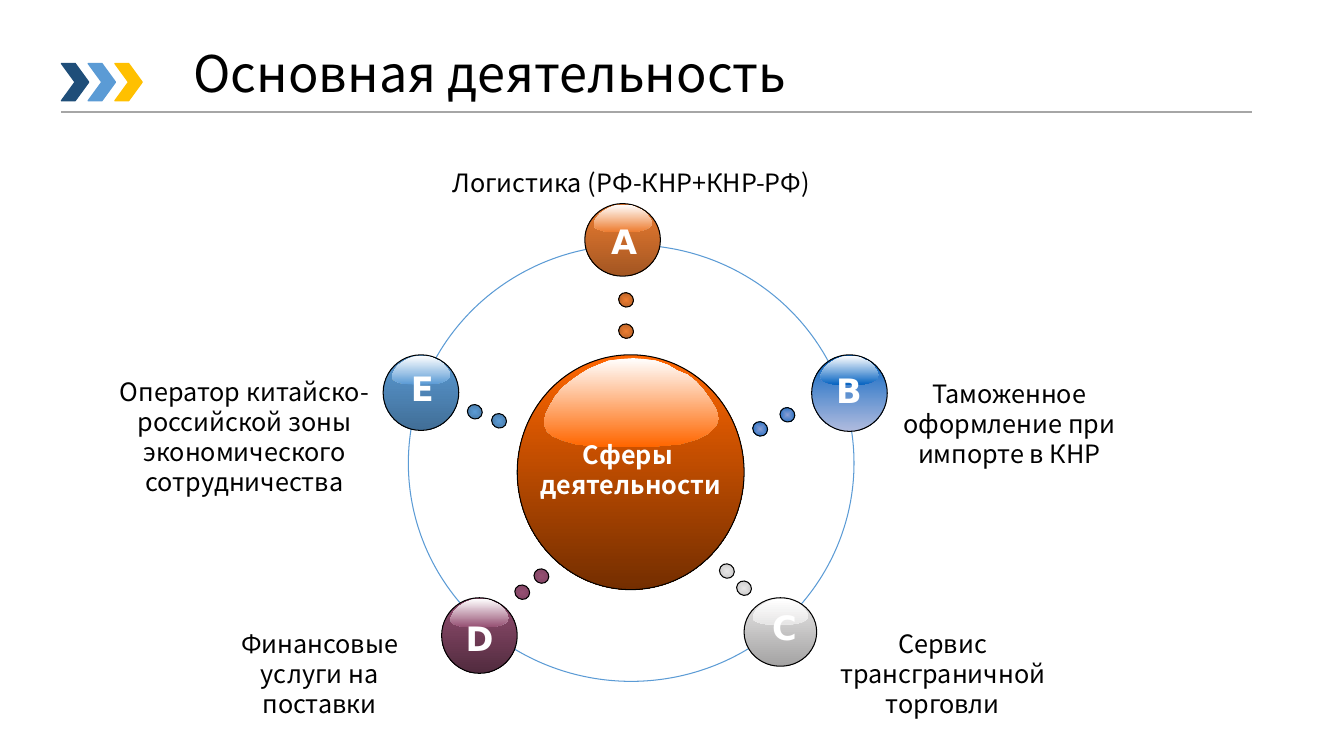
from collections import namedtuple
from lxml import etree
from pptx import Presentation
from pptx.dml.color import RGBColor
from pptx.enum.shapes import MSO_CONNECTOR, MSO_SHAPE as Preset
from pptx.enum.text import MSO_ANCHOR as Anchor, PP_ALIGN as Align
from pptx.oxml import parse_xml
from pptx.oxml.ns import nsdecls, qn
from pptx.util import Inches, Pt

BODY_FONT = "Noto Sans CJK SC"
LETTER_FONT = "DejaVu Sans"

GLOSS_OUTLINE = [
    (98, 57), (100, 68), (98, 77), (94, 85), (87, 92), (78, 97), (68, 99),
    (60, 100), (36, 100), (26, 99), (18, 97), (11, 93), (5, 88), (2, 83),
    (0, 74), (1, 64), (4, 52), (7, 42), (11, 33), (16, 25), (21, 18),
    (26, 12), (32, 7), (37, 3), (44, 1), (51, 0), (57, 1), (64, 3),
    (71, 8), (76, 14), (82, 19), (87, 27), (91, 36), (95, 47),
]

Activity = namedtuple(
    "Activity", "letter label label_box ball letter_center top bottom gloss dots dot_colors")

ACTIVITIES = [
    Activity("A", "Логистика (РФ-КНР+КНР-РФ)", (3, 0, 4.42, 0.4),
             (4.75, 0.41, 0.75, 0.72), (5.14, 0.78), "ED7D31", "A35622", "ED7D31",
             [(5.09, 1.29), (5.09, 1.6)], ("ED7D31", "A85923")),
    Activity("B", "Таможенное оформление при импорте в КНР", (7.75, 2.09, 2.42, 1.01),
             (7, 1.91, 0.75, 0.76), (7.37, 2.26), "0563C1", "B0BBDE", "0563C1",
             [(6.69, 2.43), (6.42, 2.57)], ("8A9DD2", "0563C1")),
    Activity("C", "Сервис трансграничной торговли", (7.08, 4.57, 2.44, 1.01),
             (6.33, 4.32, 0.72, 0.68), (6.73, 4.61), "E7E6E6", "A4A3A3", "E7E6E6",
             [(6.26, 4.15), (6.09, 3.98)], ("E7E6E6", "C2C1C1")),
    Activity("D", "Финансовые услуги на поставки", (1.08, 4.57, 2.08, 1.01),
             (3.33, 4.32, 0.75, 0.75), (3.7, 4.72), "954F72", "512B3E", "954F72",
             [(4.06, 4.19), (4.25, 4.03)], ("954F72", "7D4260")),
    Activity("E", "Оператор китайско-российской зоны экономического сотрудничества",
             (0, 2.07, 2.75, 1.31), (2.75, 1.91, 0.75, 0.75), (3.14, 2.24),
             "5B9BD5", "416E97", "5B9BD5",
             [(3.59, 2.4), (3.83, 2.49)], ("5B9BD5", "43719C")),
]


def rgb(value):
    return RGBColor.from_string(value)


def set_line(line, color, width):
    line.color.rgb = rgb(color)
    line.width = Pt(width)


def set_gradient(fill, start, end):
    fill.gradient()
    fill.gradient_angle = 270
    for stop, color in zip(fill.gradient_stops, (start, end)):
        stop.color.rgb = rgb(color)


def make_radial(shape):
    linear = shape.element.spPr.find(qn("a:gradFill")).find(qn("a:lin"))
    radial = parse_xml(
        f'<a:path {nsdecls("a")} path="shape">'
        '<a:fillToRect l="50000" t="50000" r="50000" b="50000"/></a:path>')
    linear.getparent().replace(linear, radial)


def add_preset(slide, preset, box):
    shape = slide.shapes.add_shape(preset, *map(Inches, box))
    shape.shadow.inherit = False
    return shape


def add_text(slide, box, lines, size, color="000000", font=BODY_FONT, bold=False,
             align=Align.CENTER, anchor=Anchor.TOP, wrap=True, spacing=None):
    frame = slide.shapes.add_textbox(*map(Inches, box)).text_frame
    frame.word_wrap = wrap
    frame.vertical_anchor = anchor
    frame.text = "\n".join(lines)
    for paragraph in frame.paragraphs:
        paragraph.alignment = align
        paragraph.line_spacing = spacing
        paragraph.font.name = font
        paragraph.font.size = Pt(size)
        paragraph.font.bold = bold
        paragraph.font.color.rgb = rgb(color)


def add_ball(slide, box, top, bottom, gloss):
    left, upper, width, height = box
    ball = add_preset(slide, Preset.OVAL, box)
    set_gradient(ball.fill, top, bottom)
    set_line(ball.line, "000000", 0.75)

    points = [(Inches(left + width * (0.117 + 0.773 * x / 100)),
               Inches(upper + height * (0.014 + 0.377 * y / 100)))
              for x, y in GLOSS_OUTLINE]
    builder = slide.shapes.build_freeform(*points[0])
    builder.add_line_segments(points[1:], close=True)
    highlight = builder.convert_to_shape()
    highlight.shadow.inherit = False
    set_gradient(highlight.fill, "FFFFFF", gloss)
    highlight.line.fill.background()


def add_header(slide, left, top, width):
    add_text(slide, (left + 1.21, top, 9.09, 0.71), ["Основная деятельность"], 36,
             align=Align.LEFT, anchor=Anchor.MIDDLE, spacing=0.9)
    for index, color in enumerate(("1F4E79", "5B9BD5", "FFC000")):
        chevron = add_preset(slide, Preset.CHEVRON,
                             (left + 0.265 * index, top + 0.23, 0.27, 0.37))
        chevron.fill.solid()
        chevron.fill.fore_color.rgb = rgb(color)
        set_line(chevron.line, color, 1)
    rule_y = Inches(top + 0.71)
    rule = slide.shapes.add_connector(
        MSO_CONNECTOR.STRAIGHT, Inches(left), rule_y, Inches(left + width), rule_y)
    set_line(rule.line, "A6A6A6", 1.5)
    etree.SubElement(rule.element.spPr, qn("a:effectLst"))


def add_activity_wheel(slide, left, top):
    def place(x, y, width, height):
        return left + x, top + y, width, height

    ring = add_preset(slide, Preset.OVAL, place(3, 0.82, 4.42, 4.33))
    ring.fill.background()
    set_line(ring.line, "5B9BD5", 0.75)
    add_ball(slide, place(4.08, 1.91, 2.25, 2.33), "FF6600", "742E00", "FF6600")
    add_text(slide, place(4.2, 2.7, 2.01, 0.71), ["Сферы ", "деятельности"], 18,
             color="FFFFFF", bold=True, wrap=False)

    for activity in ACTIVITIES:
        add_ball(slide, place(*activity.ball), activity.top, activity.bottom, activity.gloss)
        center_x, center_y = activity.letter_center
        add_text(slide, place(center_x - 0.23, center_y - 0.25, 0.46, 0.51),
                 [activity.letter], 24, color="FFFFFF", font=LETTER_FONT,
                 bold=True, wrap=False)
        for x, y in activity.dots:
            dot = add_preset(slide, Preset.OVAL, place(x, y, 0.14, 0.15))
            dot.rotation = 303.8
            set_gradient(dot.fill, *activity.dot_colors)
            make_radial(dot)
            set_line(dot.line, "000000", 0.75)
        add_text(slide, place(*activity.label_box), [activity.label], 18)


def main():
    deck = Presentation()
    deck.slide_width = Inches(13.33)
    deck.slide_height = Inches(7.5)
    slide = deck.slides.add_slide(deck.slide_layouts[6])
    add_header(slide, 0.61, 0.4, 11.81)
    add_activity_wheel(slide, 1.05, 1.61)
    deck.save("out.pptx")


if __name__ == "__main__":
    main()
